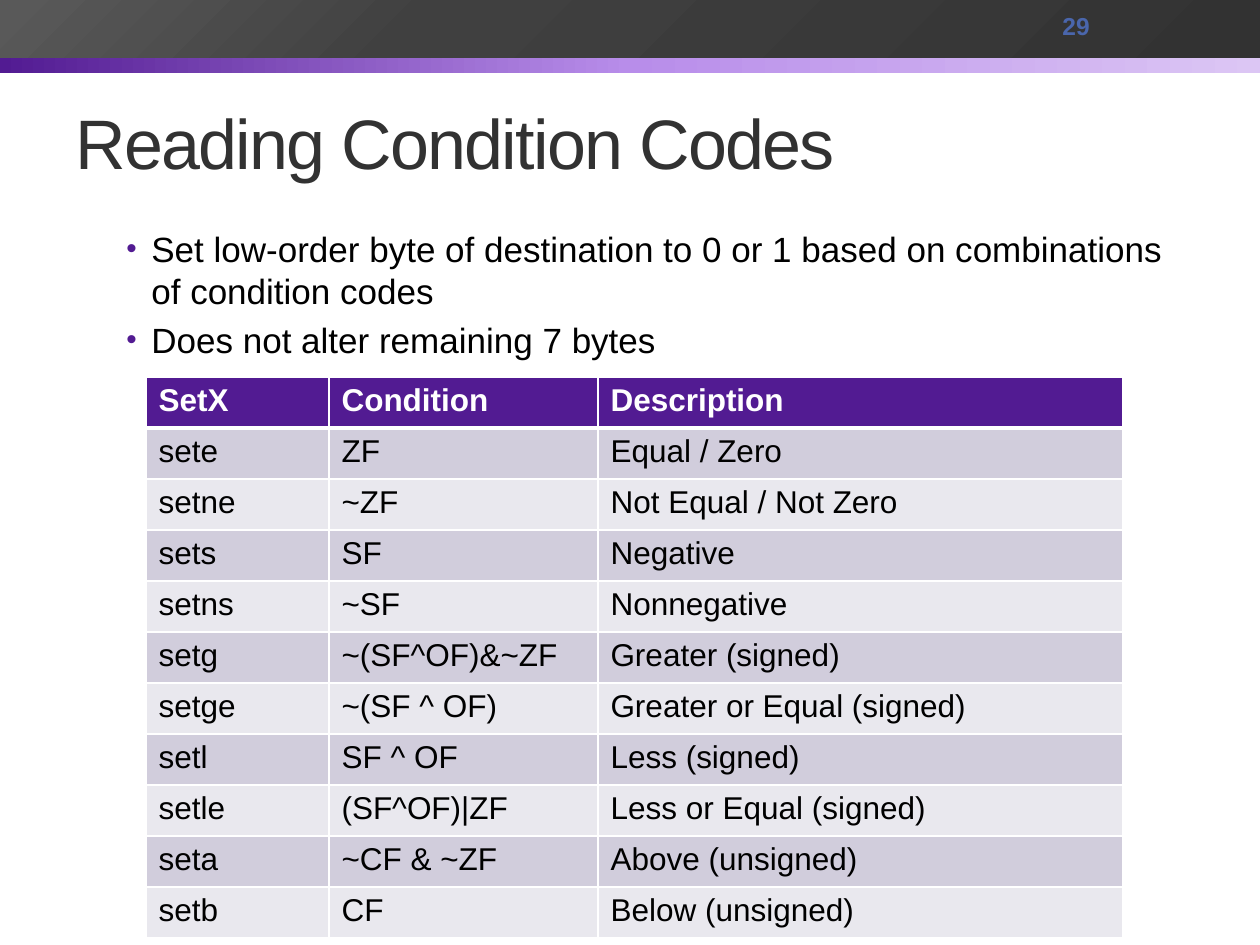
from lxml.etree import SubElement
from pptx import Presentation
from pptx.dml.color import RGBColor
from pptx.enum.shapes import MSO_SHAPE
from pptx.enum.text import MSO_ANCHOR, PP_ALIGN
from pptx.oxml.ns import qn
from pptx.util import Emu, Pt

PIXEL = 914400 / 126
FONT = "Arial"
WHITE = RGBColor(0xFF, 0xFF, 0xFF)
BLACK = RGBColor(0x00, 0x00, 0x00)
CHARCOAL = RGBColor(0x32, 0x32, 0x32)
GRAPHITE = RGBColor(0x40, 0x40, 0x40)
GREY = RGBColor(0x59, 0x59, 0x59)
PURPLE = RGBColor(0x52, 0x1B, 0x92)
LILAC = RGBColor(0xB8, 0x8D, 0xEA)
LAVENDER = RGBColor(0xDC, 0xC6, 0xF4)
BLUE = RGBColor(0x4A, 0x66, 0xAC)
DARK_BAND = RGBColor(0xD1, 0xCD, 0xDC)
LIGHT_BAND = RGBColor(0xE9, 0xE8, 0xEE)

BULLETS = [
    "Set low-order byte of destination to 0 or 1 based on combinations of condition codes",
    "Does not alter remaining 7 bytes",
]
CODES = [
    ("SetX", "Condition", "Description"),
    ("sete", "ZF", "Equal / Zero"),
    ("setne", "~ZF", "Not Equal / Not Zero"),
    ("sets", "SF", "Negative"),
    ("setns", "~SF", "Nonnegative"),
    ("setg", "~(SF^OF)&~ZF", "Greater (signed)"),
    ("setge", "~(SF ^ OF)", "Greater or Equal (signed)"),
    ("setl", "SF ^ OF", "Less (signed)"),
    ("setle", "(SF^OF)|ZF", "Less or Equal (signed)"),
    ("seta", "~CF & ~ZF", "Above (unsigned)"),
    ("setb", "CF", "Below (unsigned)"),
]


def px(length):
    return Emu(round(length * PIXEL))


def scaled(box):
    return [px(length) for length in box]


def write(para, text, size, color, bold=False, spacing=0):
    para.alignment = PP_ALIGN.LEFT
    span = para.add_run()
    span.text = text
    span.font.name = FONT
    span.font.size = Pt(size)
    span.font.bold = bold
    span.font.color.rgb = color
    if spacing:
        span.font._element.set("spc", str(spacing))


def add_color(parent, color):
    SubElement(parent, qn("a:srgbClr"), val=str(color))


def add_gradient_bar(page, box, stops, angle):
    bar = page.shapes.add_shape(MSO_SHAPE.RECTANGLE, *scaled(box))
    bar.shadow.inherit = False
    bar.line.fill.background()
    bar.fill.gradient()
    gradient = bar.fill._xPr.find(qn("a:gradFill"))
    stop_list = gradient.find(qn("a:gsLst"))
    for stop in list(stop_list):
        stop_list.remove(stop)
    for position, color in stops:
        add_color(SubElement(stop_list, qn("a:gs"), pos=str(position * 1000)), color)
    direction = gradient.find(qn("a:lin"))
    direction.set("ang", str(angle * 60000))
    direction.set("scaled", "0")


def add_header(page, box):
    left, top, width, height = box
    add_gradient_bar(page, (left, top + 30, width, height - 30),
                     [(0, PURPLE), (50, LILAC), (100, LAVENDER)], 0)
    add_gradient_bar(page, (left, top, width, 58),
                     [(0, CHARCOAL), (66, GRAPHITE), (99, GREY)], 225)
    number = page.shapes.add_textbox(*scaled((left + 1050, top + 3, 147, 45))).text_frame
    number.word_wrap = True
    number.vertical_anchor = MSO_ANCHOR.MIDDLE
    write(number.paragraphs[0], "29", size=14, color=BLUE, bold=True)


def place_title(page, box):
    title = page.shapes.title
    title.left, title.top, title.width, title.height = scaled(box)
    title.text_frame.vertical_anchor = MSO_ANCHOR.MIDDLE
    write(title.text_frame.paragraphs[0], "Reading Condition Codes",
          size=40, color=CHARCOAL, spacing=-100)


def add_bullets(page, box):
    frame = page.shapes.add_textbox(*scaled(box)).text_frame
    frame.word_wrap = True
    for index, text in enumerate(BULLETS):
        para = frame.add_paragraph() if index else frame.paragraphs[0]
        para.space_before = Pt(4)
        write(para, text, size=20, color=BLACK)
        properties = para._p.get_or_add_pPr()
        properties.set("marL", str(px(76)))
        properties.set("indent", str(px(-25)))
        add_color(SubElement(properties, qn("a:buClr")), PURPLE)
        SubElement(properties, qn("a:buSzPct"), val="85000")
        SubElement(properties, qn("a:buFont"), typeface=FONT)
        SubElement(properties, qn("a:buChar"), char="•")


def format_cell(cell, text, fill, color, bold, bottom):
    write(cell.text_frame.paragraphs[0], text, size=18, color=color, bold=bold)
    properties = cell._tc.get_or_add_tcPr()
    for side, points in (("L", 1), ("R", 1), ("T", 1), ("B", bottom)):
        border = SubElement(properties, qn(f"a:ln{side}"), w=str(Pt(points)))
        add_color(SubElement(border, qn("a:solidFill")), WHITE)
    cell.fill.solid()
    cell.fill.fore_color.rgb = fill


def add_code_table(page, box, column_widths):
    table = page.shapes.add_table(len(CODES), len(column_widths), *scaled(box)).table
    for column, width in zip(table.columns, column_widths):
        column.width = px(width)
    for row_index, texts in enumerate(CODES):
        header = row_index == 0
        band = DARK_BAND if row_index % 2 else LIGHT_BAND
        for column_index, text in enumerate(texts):
            format_cell(table.cell(row_index, column_index), text,
                        fill=PURPLE if header else band,
                        color=WHITE if header else BLACK,
                        bold=header, bottom=3 if header or False else 1)


def main():
    deck = Presentation()
    deck.slide_width, deck.slide_height = px(1260), px(945)
    page = deck.slides.add_slide(deck.slide_layouts[5])
    add_header(page, (0, 0, 1260, 73))
    place_title(page, (63, 73, 1134, 136))
    add_bullets(page, (63, 221, 1134, 672))
    add_code_table(page, (146, 377, 977, 561), (183, 269, 525))
    deck.save("out.pptx")


if __name__ == "__main__":
    main()
